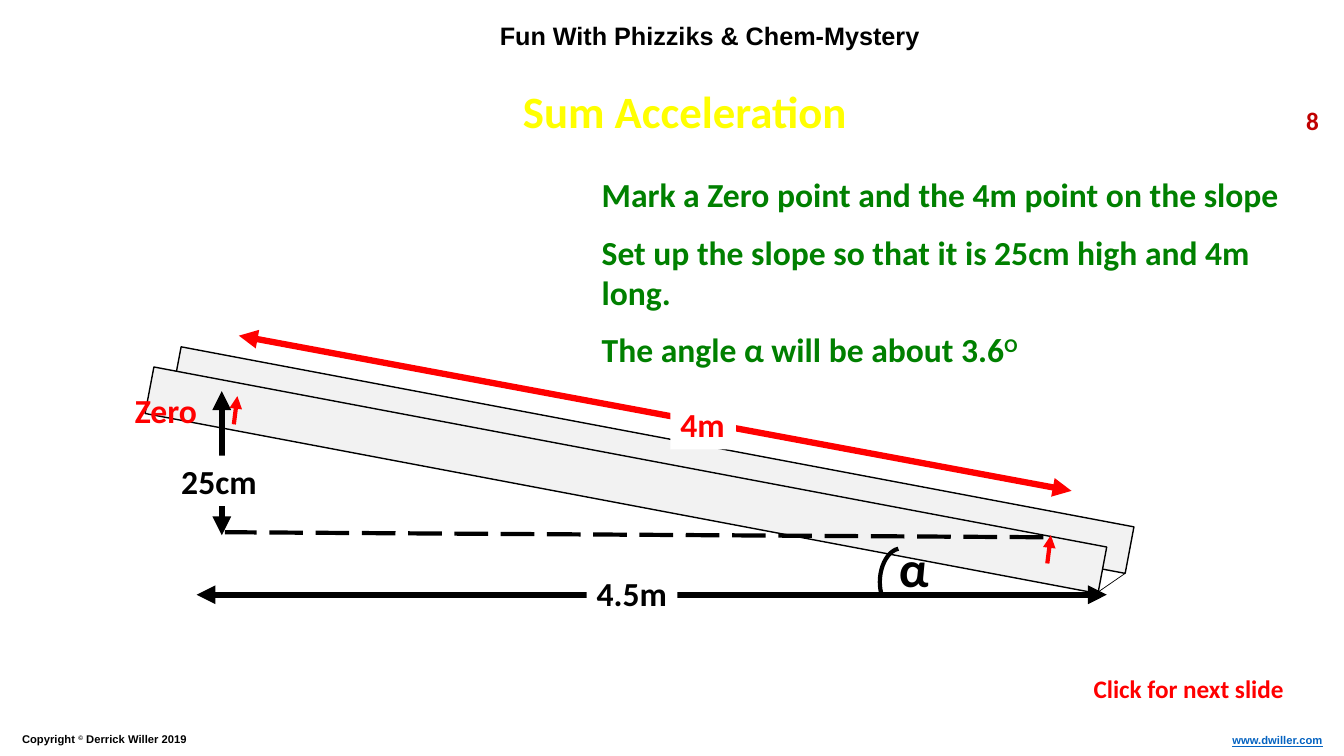
from collections import namedtuple

from lxml import etree
from pptx import Presentation
from pptx import util as u
from pptx.dml.color import RGBColor
from pptx.enum import dml, shapes, text
from pptx.oxml.ns import qn

COLORS = {
    "black": "000000", "white": "FFFFFF", "red": "FF0000", "dark_red": "C00000",
    "green": "008000", "yellow": "FFFF00", "orange": "ED7D31",
    "link": "0563C1", "board": "F2F2F2",
}
# The grid has square cells of a tenth of an inch
COLUMNS, ROWS = 133.33, 75
CELL = u.Inches(0.1)
Box = namedtuple("Box", "column row width height")


def color(name):
    return RGBColor.from_string(COLORS[name])


def cells(*counts):
    return [u.Emu(round(count * CELL)) for count in counts]


def inside(box, column, row, width, height):
    return Box(box.column + column, box.row + row, width, height)


def style(paragraph, size, ink, font="Calibri", align=text.PP_ALIGN.LEFT):
    paragraph.alignment = align
    paragraph.font.size = u.Pt(size)
    paragraph.font.name = font
    paragraph.font.bold = True
    paragraph.font.color.rgb = color(ink)


def add_raised(paragraph, words):
    run = paragraph.add_run()
    run.text = words
    run.font._element.set("baseline", "30000")


def add_text(slide, box, words, size, ink, wrap=False, fill=None, **options):
    shape = slide.shapes.add_textbox(*cells(*box))
    if fill:
        shape.fill.solid()
        shape.fill.fore_color.rgb = color(fill)
    shape.text_frame.word_wrap = wrap
    paragraph = shape.text_frame.paragraphs[0]
    paragraph.add_run().text = words
    style(paragraph, size, ink, **options)
    return shape.text_frame


def add_line(slide, box, start, end, ink, width, heads=(), dash=None):
    points = [box.column + start[0], box.row + start[1],
              box.column + end[0], box.row + end[1]]
    line = slide.shapes.add_connector(shapes.MSO_CONNECTOR.STRAIGHT, *cells(*points))
    line.line.color.rgb = color(ink)
    line.line.width = u.Pt(width)
    line.line.dash_style = dash
    for head in heads:
        etree.SubElement(line.line._ln, qn(f"a:{head}"), type="triangle")
    etree.SubElement(line._element.spPr, qn("a:effectLst"))


def add_shape(slide, box, kind, rotation, width, fill=None):
    shape = slide.shapes.add_shape(kind, *cells(*box))
    shape.shadow.inherit = False
    shape.rotation = rotation
    shape.line.color.rgb = color("black")
    shape.line.width = u.Pt(width)
    if fill:
        shape.fill.solid()
        shape.fill.fore_color.rgb = color(fill)
    else:
        shape.fill.background()
    return shape


def add_header(slide, box):
    add_text(slide, inside(box, 48.6, 1.5, 44.1, 4),
             "Fun With Phizziks & Chem-Mystery", 18, "black", font="Arial")
    add_text(slide, inside(box, 128.6, 10, 3.3, 4), "8", 18, "dark_red")

    # Title with an outline around its letters
    title = slide.shapes.title
    title.left, title.top, title.width, title.height = cells(
        *inside(box, 35.7, 7.8, 64.5, 8.3))
    frame = title.text_frame
    frame.word_wrap = False
    frame.auto_size = text.MSO_AUTO_SIZE.NONE
    frame.vertical_anchor = text.MSO_ANCHOR.TOP
    paragraph = frame.paragraphs[0]
    run = paragraph.add_run()
    run.text = "Sum Acceleration"
    style(paragraph, 32, "yellow", align=text.PP_ALIGN.CENTER)
    outline = etree.Element(qn("a:ln"), w=str(u.Pt(1.75)))
    fill = etree.SubElement(outline, qn("a:solidFill"))
    etree.SubElement(fill, qn("a:srgbClr"), val=COLORS["orange"])
    run.font._element.insert(0, outline)


def add_instructions(slide, box):
    frame = add_text(slide, box, "Mark a Zero point and the 4m point on the slope",
                     24, "green", wrap=True)
    for words in ("Set up the slope so that it is 25cm high and 4m long.",
                  "The angle α will be about 3.6"):
        paragraph = frame.add_paragraph()
        paragraph.add_run().text = words
        paragraph.space_before = u.Pt(12)
        style(paragraph, 24, "green")
    add_raised(paragraph, "O")


def add_slope(slide, box):
    # Two boards and the edge that joins them
    for column, row in ((4.7, 10.3), (2, 12.3)):
        add_shape(slide, inside(box, column, row, 96.2, 4.7),
                  shapes.MSO_SHAPE.RECTANGLE, 10.7, 1, "board")
    add_line(slide, box, (96.7, 25.9), (99.6, 23.9), "black", 0.5)

    # Slope length and base length
    both = ("headEnd", "tailEnd")
    add_line(slide, box, (11.7, 0.3), (94.3, 15.7), "red", 4.5, both)
    add_line(slide, box, (7.5, 26), (97.8, 26), "black", 4.5, both)
    add_text(slide, inside(box, 46.2, 23.3, 9, 5), "4.5m", 24, "black", fill="white")
    add_text(slide, inside(box, 54.5, 6.6, 6.5, 5), "4m", 24, "red",
             wrap=True, fill="white")

    # Height, level line and the marks at both ends
    add_line(slide, box, (10, 20.1), (10, 5.8), "black", 4.5, both)
    add_line(slide, box, (91.5, 20.3), (10.3, 19.8), "black", 3,
             dash=dml.MSO_LINE.LONG_DASH)
    for column, row in ((91.9, 22.9), (11.2, 9.1)):
        add_line(slide, box, (column, row), (column + 0.35, row - 2.8),
                 "red", 3, ("tailEnd",))
    add_text(slide, inside(box, 0.4, 5.2, 8.2, 5), "Zero", 24, "red")
    add_text(slide, inside(box, 5, 12.2, 9.6, 5), "25cm", 24, "black",
             wrap=True, fill="white")

    # Angle
    arc = add_shape(slide, inside(box, 75.3, 21.4, 3.9, 6.2),
                    shapes.MSO_SHAPE.ARC, 4.8, 3)
    arc.adjustments[0], arc.adjustments[1] = 166.25, 30.18
    arc._element.spPr.xfrm.set("flipH", "1")
    add_text(slide, inside(box, 76.2, 19.8, 5, 7.1), "α", 36, "black")


def add_footer(slide, box):
    add_text(slide, inside(box, 107.5, 0, 21, 4), "Click for next slide", 18, "red")
    frame = add_text(slide, inside(box, 1.2, 5.9, 56.5, 2.4), "Copyright ", 8,
                     "black", wrap=True, font="Arial")
    add_raised(frame.paragraphs[0], "©")
    frame.paragraphs[0].add_run().text = " Derrick Willer 2019"
    frame = add_text(slide, inside(box, 118.8, 6, 13.4, 2.4), "www.dwiller.com", 8,
                     "link", wrap=True, font="Arial", align=text.PP_ALIGN.RIGHT)
    frame.paragraphs[0].font.underline = True


def main():
    presentation = Presentation()
    presentation.slide_width, presentation.slide_height = cells(COLUMNS, ROWS)
    slide = presentation.slides.add_slide(presentation.slide_layouts[5])
    add_header(slide, Box(0, 0, COLUMNS, 17))
    add_instructions(slide, Box(58.7, 16.8, 71.5, 20.5))
    add_slope(slide, Box(12, 33, 100, 29))
    add_footer(slide, Box(0, 66.3, COLUMNS, 8.7))
    presentation.save("out.pptx")


if __name__ == "__main__":
    main()
